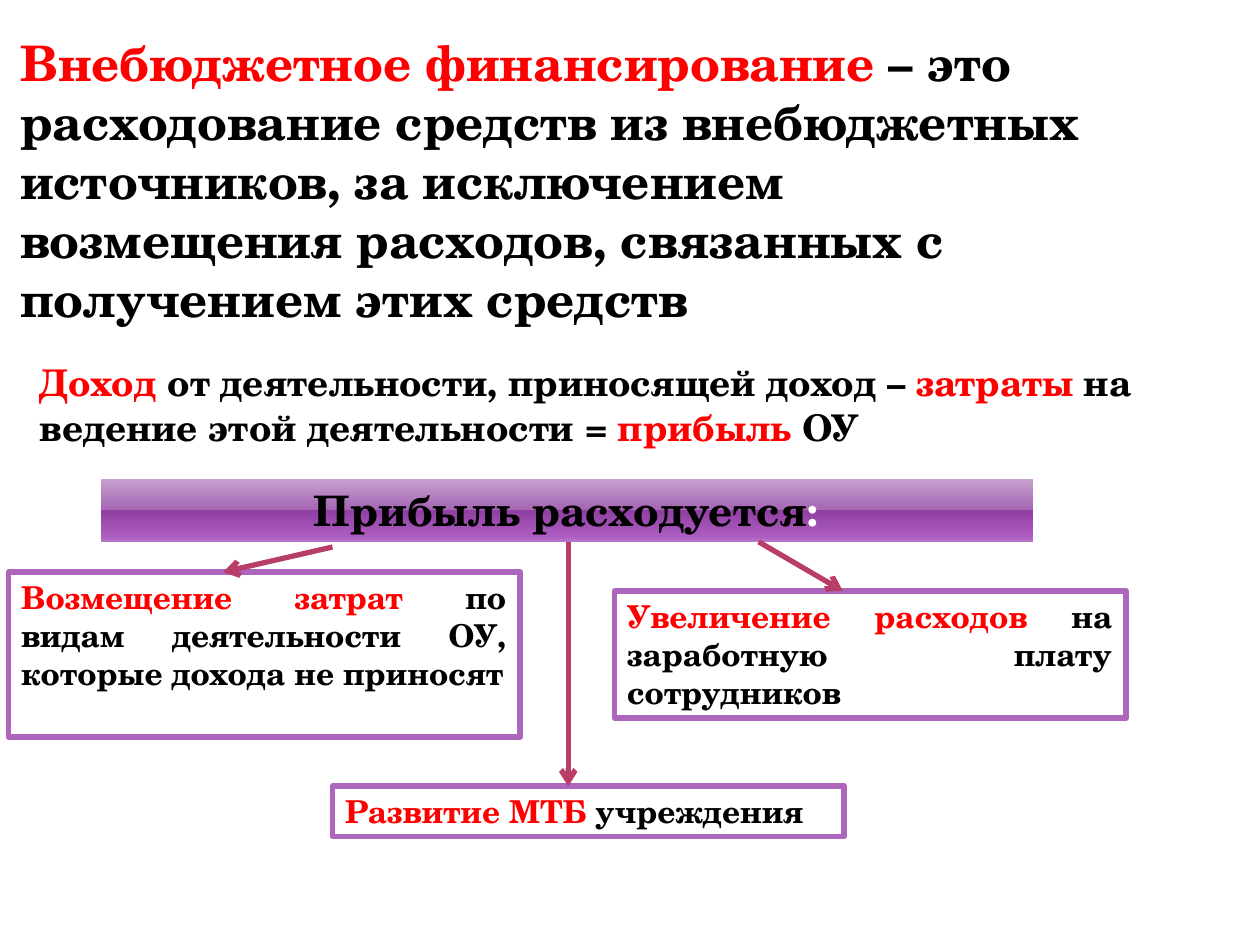
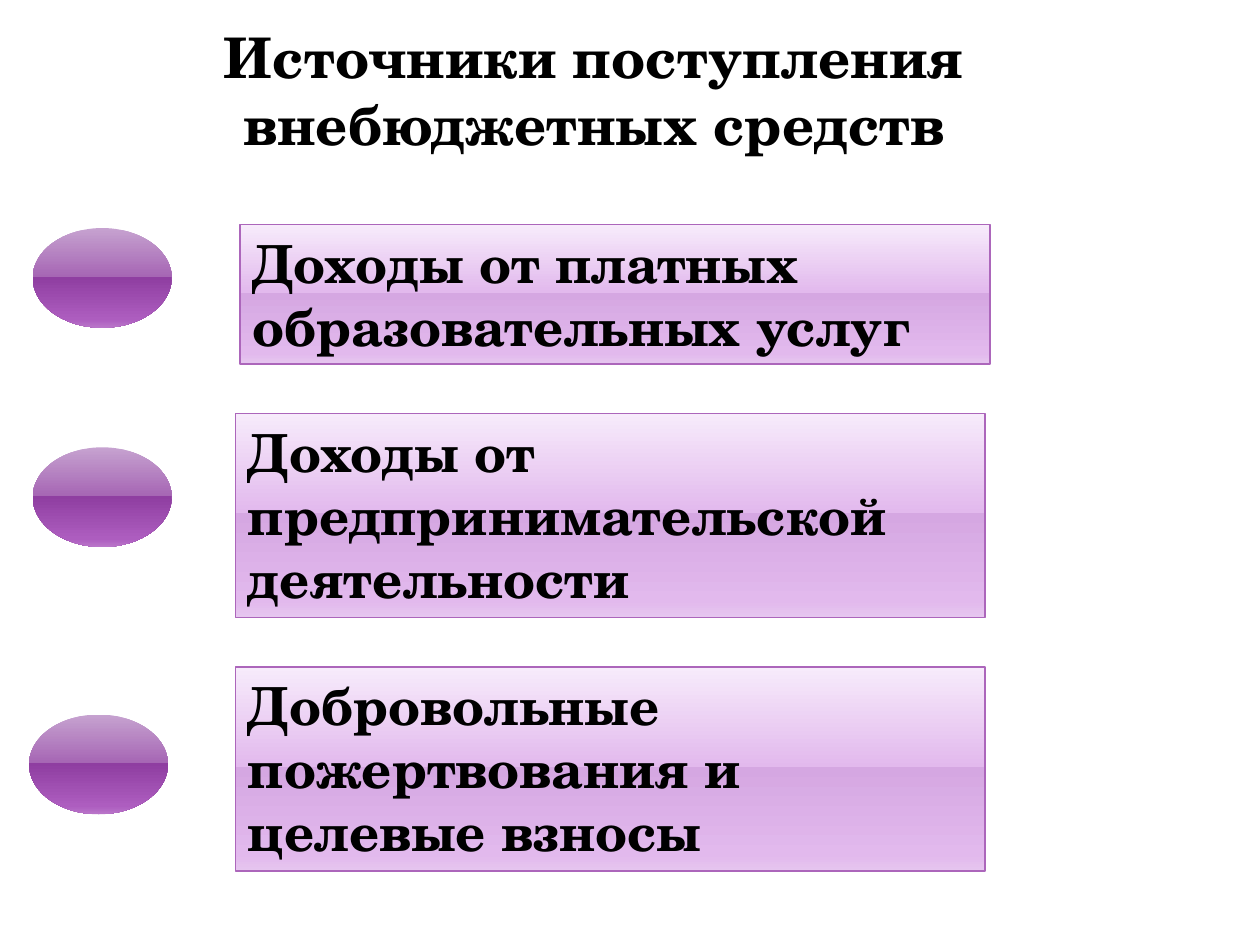
from lxml.etree import SubElement
from pptx import Presentation
from pptx.dml.color import RGBColor
from pptx.enum.shapes import MSO_CONNECTOR, MSO_SHAPE
from pptx.enum.text import MSO_ANCHOR, MSO_AUTO_SIZE, PP_ALIGN
from pptx.oxml.ns import qn
from pptx.util import Pt

FONT = "TeX Gyre Schola"
COLORS = {
    "text": "000000",
    "accent": "FF0000",
    "light": "FFFFFF",
    "border": "AC66BB",
    "arrow": "B83D68",
}
STOPS = (0, 49, 49, 92, 100)
GRADIENTS = {
    "vivid": ("C6A2D0", "A666B4", "8F3EA1", "AD5DBF", "BA76CA"),
    "pale": ("F7EBFB", "E2B9ED", "D5A7E2", "E2B9ED", "E6C6EF"),
}


def color(name):
    """Return the palette colour with this name."""
    return RGBColor.from_string(COLORS[name])


def write(shape, paragraphs, size, alignment=PP_ALIGN.LEFT):
    """Fill a shape with paragraphs, each a list of (text, colour name) runs."""
    frame = shape.text_frame
    frame.word_wrap = True
    frame.auto_size = MSO_AUTO_SIZE.NONE
    frame.vertical_anchor = MSO_ANCHOR.TOP
    frame.margin_left = Pt(7.2)
    frame.margin_right = Pt(8)
    frame.margin_top = frame.margin_bottom = Pt(3.6)
    for index, runs in enumerate(paragraphs):
        paragraph = frame.add_paragraph() if index else frame.paragraphs[0]
        paragraph.alignment = alignment
        for text, color_name in runs:
            run = paragraph.add_run()
            run.text = text
            run.font.name = FONT
            run.font.size = Pt(size)
            run.font.bold = True
            run.font.color.rgb = color(color_name)


def place_title(slide, box, runs, size, alignment=PP_ALIGN.LEFT):
    """Move the title placeholder to the box and write the title."""
    title = slide.shapes.title
    title.left, title.top, title.width, title.height = map(Pt, box)
    write(title, [runs], size, alignment)


def add_plain_shape(slide, kind, box, border=None):
    """Add a shape without shadow, with a border of the given width if any."""
    shape = slide.shapes.add_shape(kind, *map(Pt, box))
    shape.shadow.inherit = False
    if border:
        shape.line.color.rgb = color("border")
        shape.line.width = Pt(border)
    else:
        shape.line.fill.background()
    return shape


def add_gradient_shape(slide, kind, box, gradient, border=None):
    """Add a shape filled with a glossy gradient running downwards."""
    shape = add_plain_shape(slide, kind, box, border)
    shape.fill.gradient()
    shape.fill.gradient_angle = 270
    stop_list = shape._element.spPr.find(qn("a:gradFill")).find(qn("a:gsLst"))
    for stop in list(stop_list):
        stop_list.remove(stop)
    for position, value in zip(STOPS, GRADIENTS[gradient]):
        stop = SubElement(stop_list, qn("a:gs"), pos=str(position * 1000))
        SubElement(stop, qn("a:srgbClr"), val=value)
    return shape


def add_arrow(slide, start, end):
    """Add an open-headed arrow between two points."""
    connector = slide.shapes.add_connector(
        MSO_CONNECTOR.STRAIGHT, *map(Pt, (*start, *end)))
    connector.line.color.rgb = color("arrow")
    connector.line.width = Pt(3)
    properties = connector._element.spPr
    SubElement(properties.find(qn("a:ln")), qn("a:tailEnd"), type="arrow")
    SubElement(properties, qn("a:effectLst"))


def add_formula(slide, box):
    """Write how profit follows from income and costs."""
    formula = slide.shapes.add_textbox(*map(Pt, box))
    write(formula, [[
        ("Доход", "accent"),
        (" от деятельности, приносящей доход – ", "text"),
        ("затраты", "accent"),
        (" на ведение этой деятельности = ", "text"),
        ("прибыль", "accent"),
        (" ОУ", "text"),
    ]], 21)


def add_profit_uses(slide, box):
    """Draw the profit band with arrows to the three uses of profit."""
    left, top, width, height = box
    band_left, band_width, band_height = left + 52.6, 532.8, 36
    use_width = 292.3
    band = add_gradient_shape(
        slide, MSO_SHAPE.RECTANGLE, (band_left, top, band_width, band_height), "vivid")
    write(band, [[("Прибыль расходуется", "text"), (":", "light")]],
          24, PP_ALIGN.CENTER)

    uses = [
        ("Возмещение затрат", " по видам деятельности ОУ, которые дохода не приносят",
         0, 53.3, 94.3, (185, 39), 122.5),
        ("Развитие МТБ ", "учреждения",
         185, height - 28.8, 28.8, (319.7, band_height), 319.7),
        ("Увеличение расходов", " на заработную плату сотрудников",
         width - use_width, 64.1, 72.7, (428.5, band_height), 476.6),
    ]
    for accent, rest, x, y, use_height, start, end_x in uses:
        use = add_plain_shape(slide, MSO_SHAPE.RECTANGLE,
                              (left + x, top + y, use_width, use_height), 3.15)
        use.fill.solid()
        use.fill.fore_color.rgb = color("light")
        write(use, [[(accent, "accent"), (rest, "text")]], 18, PP_ALIGN.JUSTIFY)
        add_arrow(slide, (left + start[0], top + start[1]), (left + end_x, top + y))


def add_source(slide, box, lines, marker_left, marker_top):
    """Draw one income source with its oval marker, offset from the box."""
    left, top = box[:2]
    source = add_gradient_shape(slide, MSO_SHAPE.RECTANGLE, box, "pale", 0.9)
    write(source, [[(line, "text")] for line in lines], 30)
    add_gradient_shape(slide, MSO_SHAPE.OVAL,
                       (left + marker_left, top + marker_top, 79.4, 57), "vivid")


def build_definition_slide(slide):
    """Build the slide that defines extra-budgetary financing."""
    place_title(slide, (4.3, 15.1, 640.8, 177.1), [
        ("Внебюджетное финансирование ", "accent"),
        ("– это расходование средств из внебюджетных источников, за исключением "
         "возмещения расходов, связанных с получением этих средств", "text"),
    ], 28)
    add_formula(slide, (15.8, 202.3, 640.8, 58.3))
    add_profit_uses(slide, (5, 273.6, 638.6, 204.5))


def build_sources_slide(slide):
    """Build the slide that lists the sources of funds."""
    place_title(slide, (35.3, 9.4, 609.1, 85),
                [("Источники поступления внебюджетных средств", "text")],
                32, PP_ALIGN.CENTER)
    sources = [
        (137.3, 128.2, 80, ["Доходы от платных", "образовательных услуг"], -118.6, 2.1),
        (134.6, 236.2, 116.6, ["Доходы от предпринимательской деятельности"],
         -115.9, 19.4),
        (134.6, 381.3, 116.6, ["Добровольные пожертвования и целевые взносы"],
         -118, 27),
    ]
    for left, top, height, lines, marker_left, marker_top in sources:
        add_source(slide, (left, top, 428.4, height), lines, marker_left, marker_top)


def main():
    """Build and save the presentation."""
    presentation = Presentation()
    presentation.slide_width, presentation.slide_height = Pt(720), Pt(540)
    title_only = presentation.slide_layouts[5]
    for build in (build_definition_slide, build_sources_slide):
        build(presentation.slides.add_slide(title_only))
    presentation.save("out.pptx")


if __name__ == "__main__":
    main()
